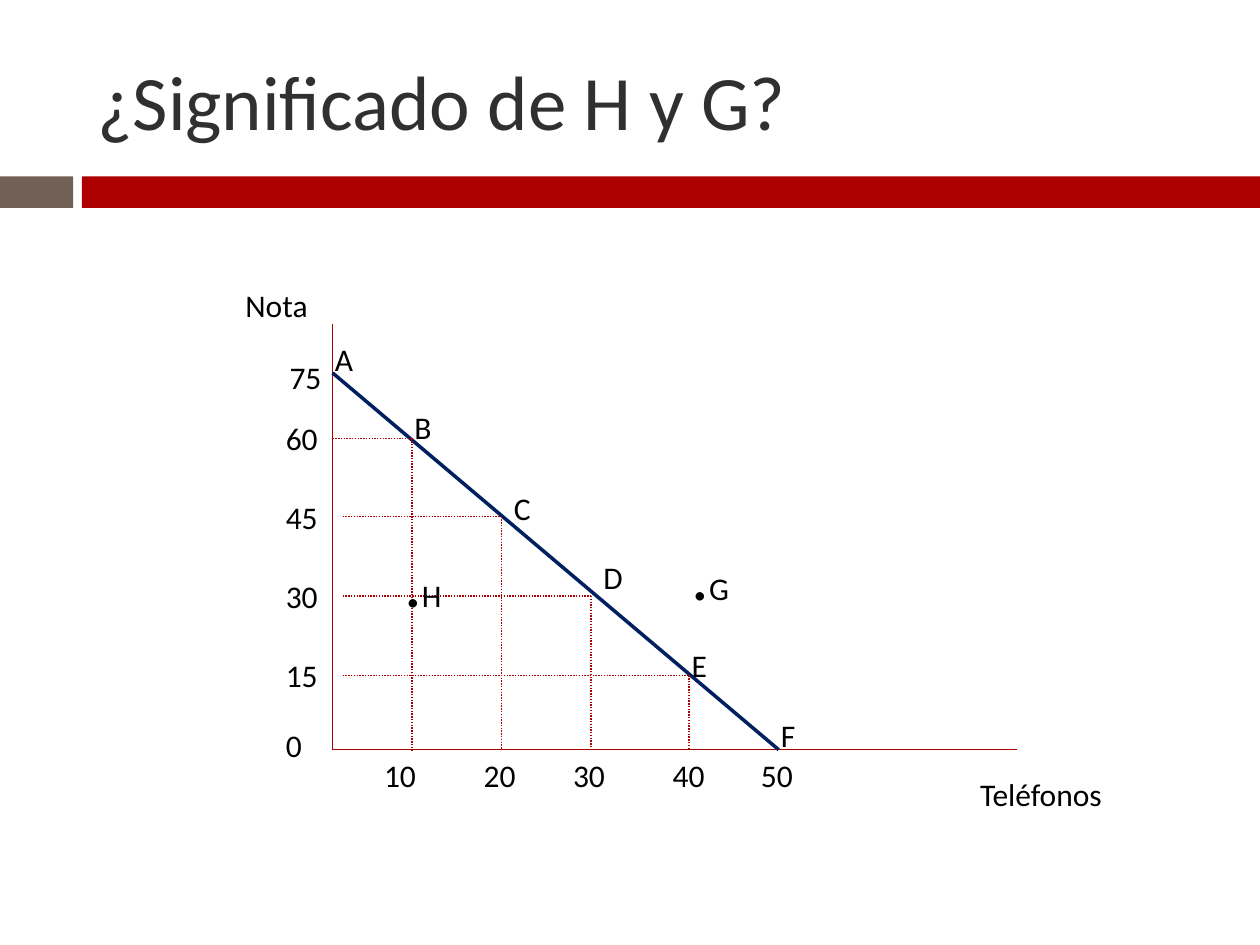
"""Build a slide with a production frontier of grades against phones, asking what points H and G mean."""
from lxml import etree
from pptx import Presentation, util as u
from pptx.dml.color import RGBColor
from pptx.enum import dml, shapes, text
from pptx.oxml.ns import qn

RED = RGBColor(0xAD, 0x01, 0x01)
TAUPE = RGBColor(0x72, 0x60, 0x56)
NAVY = RGBColor(0x00, 0x20, 0x60)
CHARCOAL = RGBColor(0x30, 0x30, 0x30)
BLACK = RGBColor(0, 0, 0)

prs = Presentation()
prs.slide_width, prs.slide_height = u.Inches(10), u.Inches(7.5)
COL, ROW = prs.slide_width / 100, prs.slide_height / 75
slide = prs.slides.add_slide(prs.slide_layouts[5])


def add_label(wording, left, top, width, height=4.0, sizes=(18,)):
    label = slide.shapes.add_textbox(int(left * COL), int(top * ROW), int(width * COL), int(height * ROW))
    label.text_frame.word_wrap = True
    paragraph = label.text_frame.paragraphs[0]
    for part, size in zip(wording, sizes):
        run = paragraph.add_run()
        run.text = part
        run.font.name, run.font.size = "Calibri", u.Pt(size)
        run.font.color.rgb = BLACK


def add_line(start, end, color=RED, weight=0.79, dotted=False):
    line = slide.shapes.add_connector(
        shapes.MSO_CONNECTOR.STRAIGHT,
        int(start[0] * COL), int(start[1] * ROW), int(end[0] * COL), int(end[1] * ROW))
    line.line.color.rgb = color
    line.line.width = u.Pt(weight)
    if dotted:
        line.line.dash_style = dml.MSO_LINE.ROUND_DOT
    etree.SubElement(line._element.spPr, qn("a:effectLst"))


for left, width, color in ((0, 5.8, TAUPE), (6.5, 93.5, RED)):
    band = slide.shapes.add_shape(
        shapes.MSO_SHAPE.RECTANGLE, int(left * COL), int(14 * ROW), int(width * COL), int(2.5 * ROW))
    band.shadow.inherit = False
    band.fill.solid()
    band.fill.fore_color.rgb = color
    band.line.fill.background()

title = slide.shapes.title
title.left, title.top = int(6.7 * COL), int(2.5 * ROW)
title.width, title.height = int(89.2 * COL), int(10.8 * ROW)
title.text_frame.text = "¿Significado de H y G?"
title.text_frame.vertical_anchor = text.MSO_ANCHOR.MIDDLE
question = title.text_frame.paragraphs[0]
question.alignment = text.PP_ALIGN.LEFT
question.runs[0].font.name = "Calibri"
question.runs[0].font.size = u.Pt(44)
question.runs[0].font.color.rgb = CHARCOAL

axis_x, axis_y = 26.4, 59.5
add_line((axis_x, 25.7), (axis_x, axis_y))
add_line((axis_x, axis_y), (80.7, axis_y))
add_line((axis_x, 29.6), (61.8, axis_y), NAVY, 2)

add_label(["Nota"], 18.5, 22.2, 9.4)
add_label(["Teléfonos"], 76.8, 61, 13.4)

grades = (("75", 22, 27.9), ("60", 21.7, 32.8), ("45", 21.7, 39),
          ("30", 21.7, 45.3), ("15", 21.7, 51.6), ("0", 21.7, 57.1))
for grade, left, top in grades:
    add_label([grade], left, top, 6)

for phones, left in zip(range(10, 60, 10), (29.5, 37.4, 44.5, 52.4, 59.4)):
    add_label([str(phones)], left, axis_y, 6.3)

for guide_start, x, y in ((axis_x, 32.7, 34.8), (27.2, 39.8, 41), (27.2, 46.9, 47.3), (27.2, 54.7, 53.6)):
    add_line((guide_start, y), (x, y), dotted=True)
    add_line((x, y), (x, axis_y), dotted=True)

frontier_names = (("A", 25.6, 26.5), ("B", 31.9, 31.9), ("C", 39.8, 38.3),
                  ("D", 46.9, 43.8), ("E", 53.9, 50.8), ("F", 61, 56.3))
for name, left, top in frontier_names:
    add_label([name], left, top, 4.7)

for name, left, top in (("G", 53.9, 41.6), ("H", 31.1, 42.2)):
    add_label([".", name], left, top, 7.1, 7.7, (40, 18))

prs.save("out.pptx")
